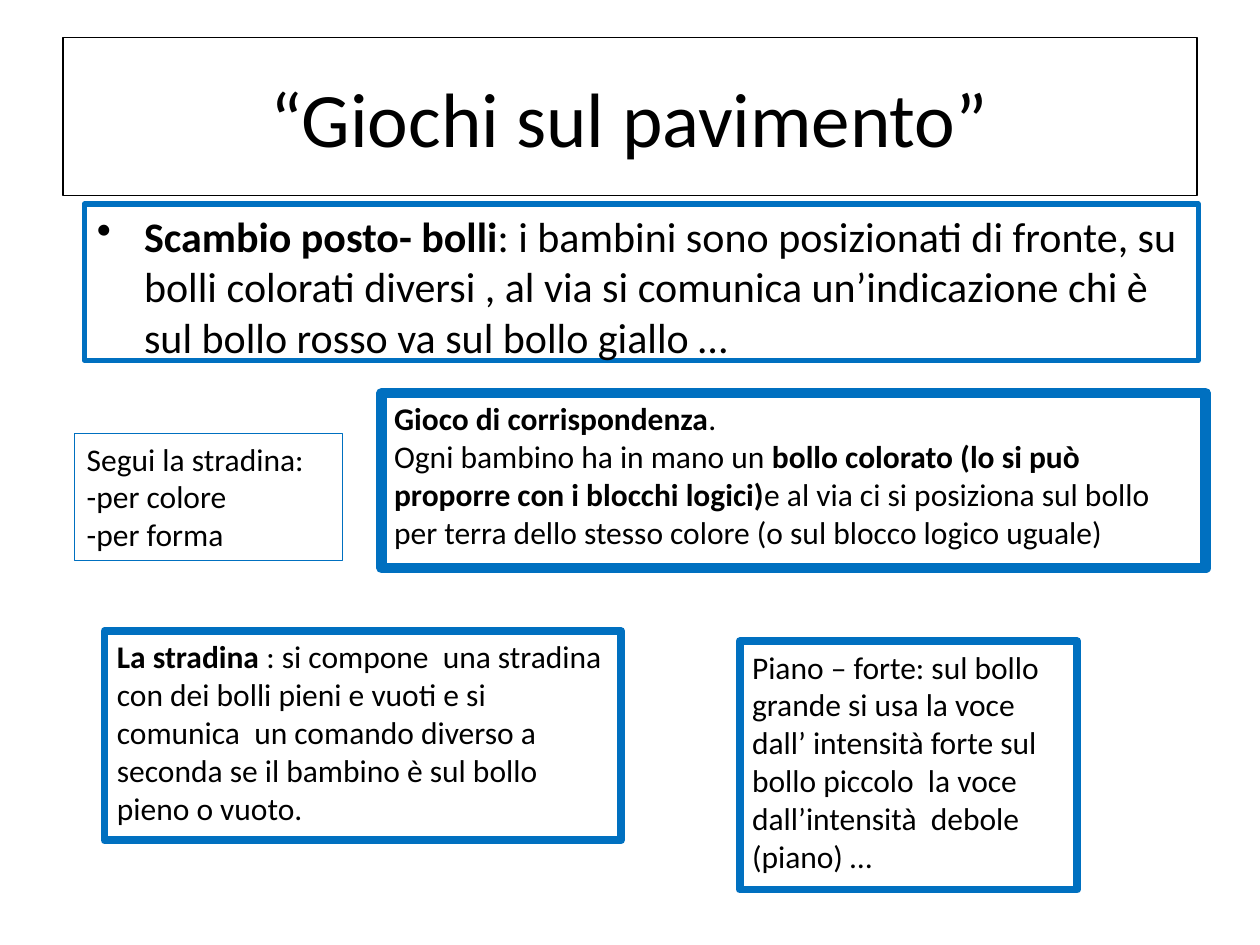
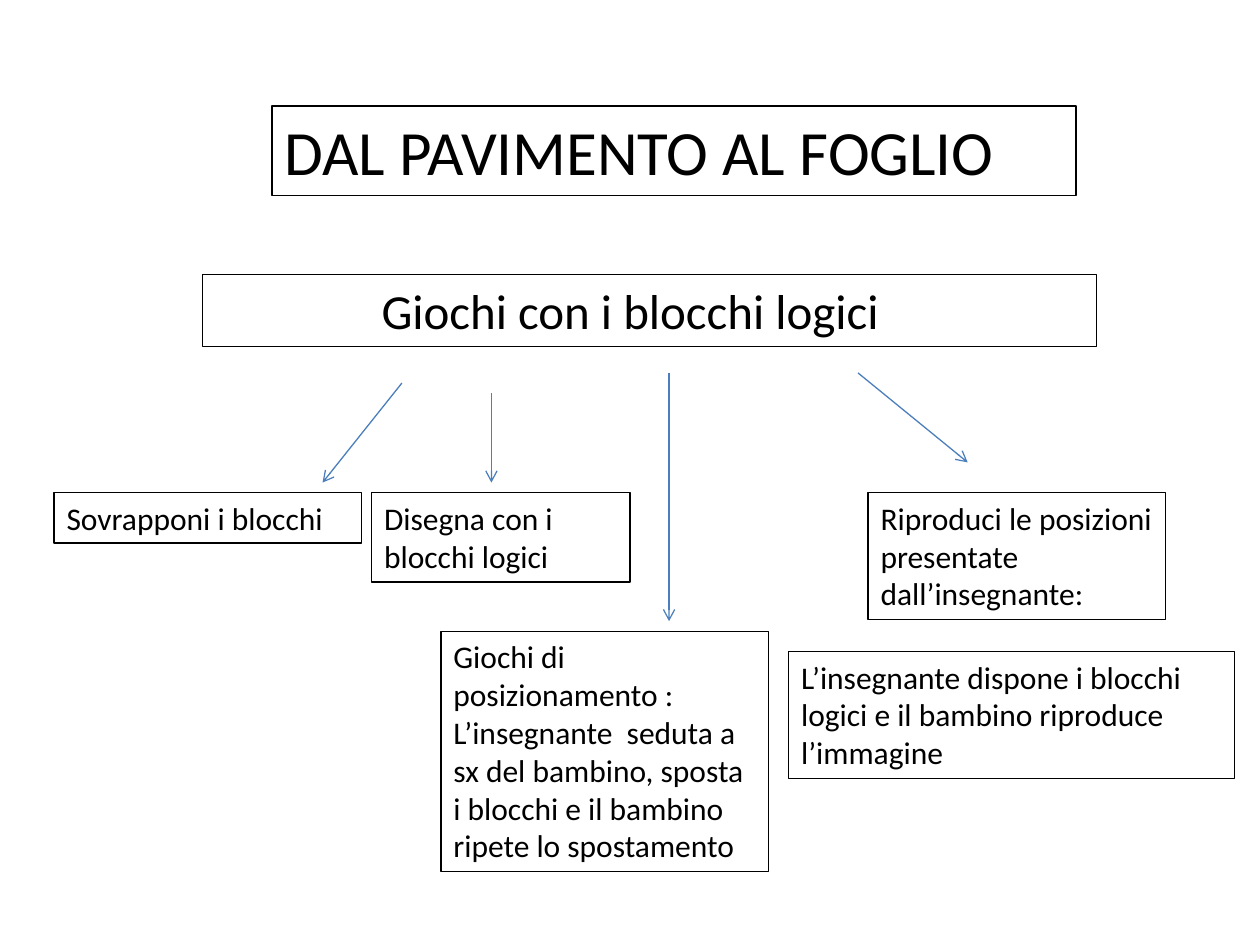
import pptx
import pptx.util
import pptx.dml.color
import pptx.enum.shapes
import pptx.enum.text
import pptx.oxml.ns
import pptx.oxml.xmlchemy
from dataclasses import dataclass


@dataclass(frozen=True)
class Theme:
    font: str = "Calibri"
    ink: str = "000000"
    blue: str = "0070C0"
    arrow: str = "4B7EBC"
    thin: float = 0.75
    title: int = 44
    head: int = 36
    sub: int = 28
    lead: int = 24
    text: int = 18


T = Theme()
CELL = 0.1  # the slide is a grid of 100 columns by 75 rows
COLS, ROWS = 100, 75

# Content: each box has a place (column, row, columns, rows) and its
# paragraphs, with bold words between asterisks
FLOOR = [
    dict(at=(5, 3, 90, 12.5), size=T.title, mid=True,
         text=["“Giochi sul pavimento”"]),
    dict(at=(6.7, 16.2, 88.4, 12.4), size=T.lead, line=T.blue, width=3, bullet=True,
         text=["*Scambio posto- bolli*: i bambini sono posizionati di fronte, su "
               "bolli colorati diversi , al via si comunica un’indicazione chi è "
               "sul bollo rosso va sul bollo giallo …"]),
    dict(at=(30.3, 31.2, 65.4, 13.9), line=T.blue, width=6,
         text=["*Gioco di corrispondenza*.",
               "Ogni bambino ha in mano un *bollo colorato (lo si può  proporre "
               "con i blocchi logici)*e al via ci si posiziona sul bollo per terra "
               "dello stesso colore (o sul blocco logico uguale)"]),
    dict(at=(8.3, 50.1, 41, 16.6), line=T.blue, width=4.5,
         text=["*La stradina *: si compone  una stradina con dei bolli pieni e "
               "vuoti e si comunica  un comando diverso a seconda se il bambino "
               "è sul bollo pieno o vuoto."]),
    dict(at=(58.7, 50.9, 26.8, 19.7), line=T.blue, width=4.5,
         text=["Piano – forte: sul bollo grande si usa la voce dall’ intensità "
               "forte sul bollo piccolo  la voce dall’intensità  debole (piano) …"]),
    dict(at=(5.9, 34.4, 21.3, 10.1), line=T.blue,
         text=["Segui la stradina:", "-per colore", "-per forma"]),
]

TOP = 39.1  # row shared by the first three games
SHEET = [
    dict(at=(21.6, 8.4, 63.8, 7.1), size=T.head, text=["DAL PAVIMENTO AL FOGLIO"]),
    dict(at=(16.1, 21.8, 70.9, 5.7), size=T.sub, indent=13.2,
         text=["Giochi con i blocchi logici"]),
    dict(at=(4.3, TOP, 24.4, 4), text=["Sovrapponi i blocchi"]),
    dict(at=(29.5, TOP, 20.5, 7.1), text=["Disegna con i blocchi logici"]),
    dict(at=(68.9, TOP, 23.6, 10.1),
         text=["Riproduci le posizioni presentate dall’insegnante:"]),
    dict(at=(62.6, 51.7, 35.4, 10.1),
         text=["L’insegnante dispone i blocchi logici e il bambino riproduce "
               "l’immagine"]),
    dict(at=(35, 50.1, 26, 19.1),
         text=["Giochi di posizionamento :",
               "L’insegnante  seduta a sx del bambino, sposta i blocchi e il "
               "bambino ripete lo spostamento"]),
]
ARROWS = [
    (31.9, 30.4, 25.6, 38.3),
    (39, 31.2, 39, 38.3),
    (68.1, 29.6, 76.8, 36.7),
    (53.1, 29.6, 53.1, 49.3),
]


def grid(*cells):
    return [pptx.util.Inches(n * CELL) for n in cells]


def color(code):
    return pptx.dml.color.RGBColor.from_string(code)


def make_xml(tag, **attrs):
    part = pptx.oxml.xmlchemy.OxmlElement(tag)
    for key, val in attrs.items():
        part.set(key, val)
    return part


def set_line(item, code, width):
    item.line.color.rgb = color(code)
    item.line.width = pptx.util.Pt(width)


def add_box(slide, at, text, size=T.text, line=T.ink, width=T.thin,
            mid=False, bullet=False, indent=0):
    box = slide.shapes.add_textbox(*grid(*at))
    set_line(box, line, width)
    frame = box.text_frame
    frame.word_wrap = True
    if mid:
        frame.vertical_anchor = pptx.enum.text.MSO_ANCHOR.MIDDLE
    for num, words in enumerate(text):
        para = frame.add_paragraph() if num else frame.paragraphs[0]
        para.font.name, para.font.size = T.font, pptx.util.Pt(size)
        para.font.color.rgb = color(T.ink)
        if mid:
            para.alignment = pptx.enum.text.PP_ALIGN.CENTER
        # Every second piece between asterisks is bold
        for pos, piece in enumerate(words.split("*")):
            if piece:
                run = para.add_run()
                run.text = piece
                run.font.bold = True if pos % 2 else None
        props = para._p.get_or_add_pPr()
        if indent:
            props.set("marL", str(grid(indent)[0]))
        if bullet:
            hang = grid(3.75)[0]
            props.set("marL", str(hang))
            props.set("indent", str(-hang))
            para.space_before = pptx.util.Pt(size * 0.2)
            last = props.find(pptx.oxml.ns.qn("a:defRPr"))
            last.addprevious(make_xml("a:buChar", char="•"))


def add_arrow(slide, ends):
    kind = pptx.enum.shapes.MSO_CONNECTOR.STRAIGHT
    link = slide.shapes.add_connector(kind, *grid(*ends))
    set_line(link, T.arrow, T.thin)
    props = link._element.spPr
    stroke = props.find(pptx.oxml.ns.qn("a:ln"))
    stroke.append(make_xml("a:tailEnd", type="arrow"))
    props.append(make_xml("a:effectLst"))


def main():
    deck = pptx.Presentation()
    deck.slide_width, deck.slide_height = grid(COLS, ROWS)
    for boxes, arrows in ((FLOOR, []), (SHEET, ARROWS)):
        slide = deck.slides.add_slide(deck.slide_layouts[6])
        for box in boxes:
            add_box(slide, **box)
        for ends in arrows:
            add_arrow(slide, ends)
    deck.save("out.pptx")


if __name__ == "__main__":
    main()
